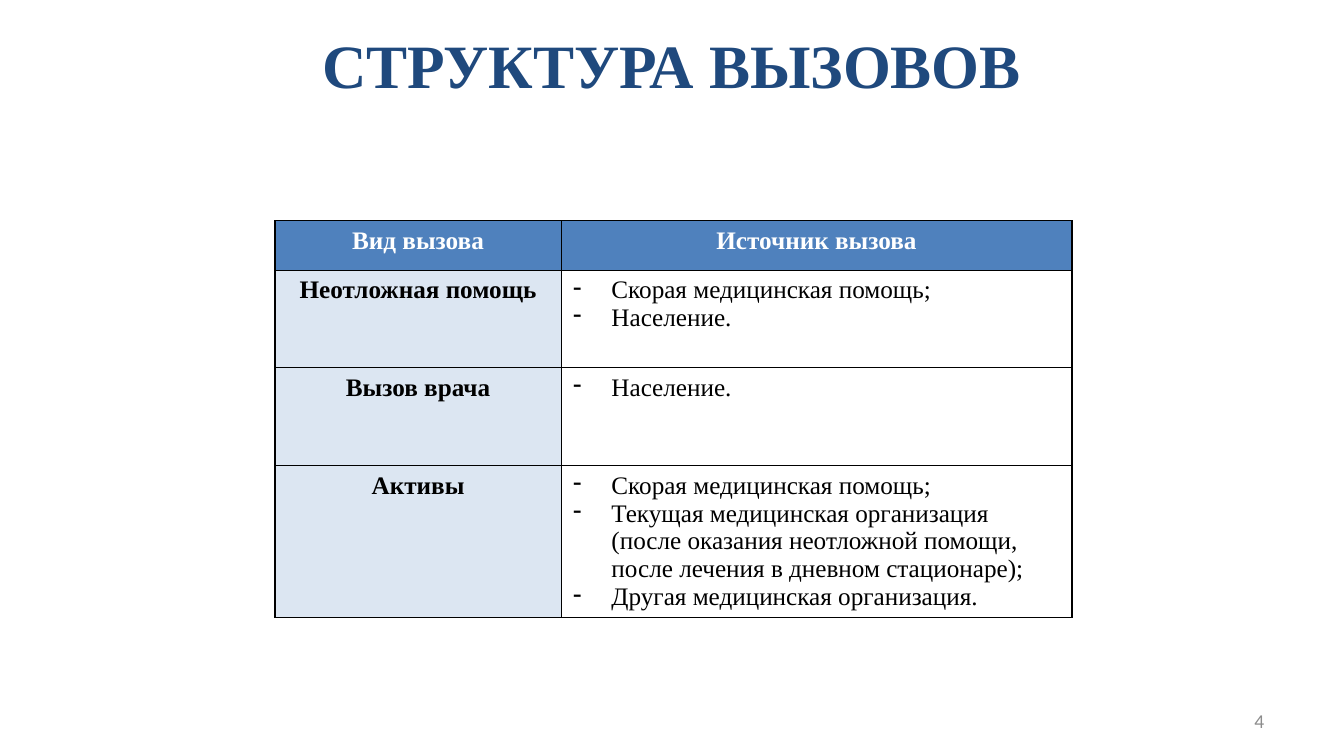
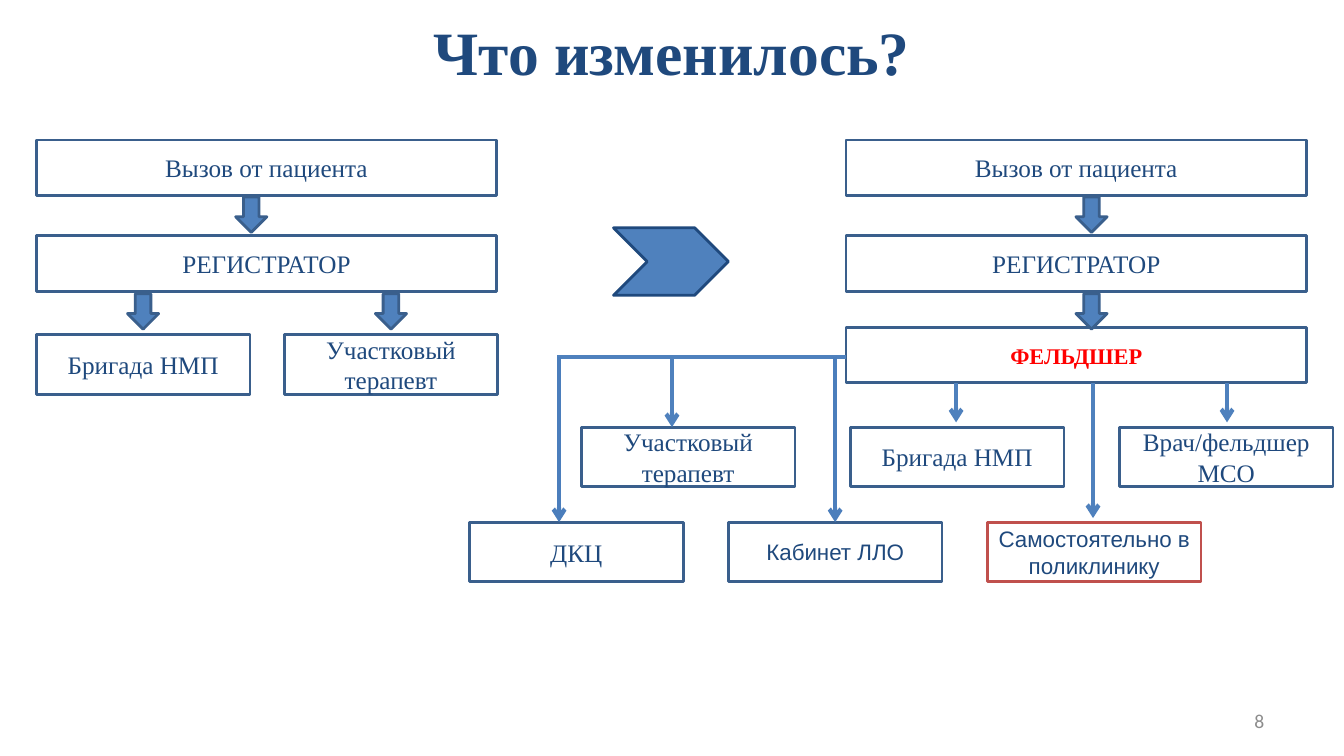
"""Builds two slides on how patient calls are structured and routed."""
from dataclasses import dataclass
from typing import Optional

from lxml.etree import SubElement
from pptx import Presentation
from pptx.dml.color import RGBColor
from pptx.enum.shapes import MSO_CONNECTOR, MSO_SHAPE
from pptx.enum.text import MSO_ANCHOR, MSO_AUTO_SIZE, PP_ALIGN
from pptx.oxml.ns import qn
from pptx.util import Inches, Pt

WIDTH, HEIGHT = 13.34, 7.5
NAVY = RGBColor(0x1F, 0x49, 0x7D)
BLUE = RGBColor(0x4F, 0x81, 0xBD)
STEEL = RGBColor(0x4B, 0x7E, 0xBC)
OUTLINE = RGBColor(0x3A, 0x5F, 0x8C)
PALE = RGBColor(0xDC, 0xE6, 0xF2)
GRAY = RGBColor(0x8C, 0x8C, 0x8C)
RED = RGBColor(0xFF, 0x00, 0x00)
BRICK = RGBColor(0xC0, 0x50, 0x4D)
WHITE = RGBColor(0xFF, 0xFF, 0xFF)
BLACK = RGBColor(0x00, 0x00, 0x00)
SERIF, SANS, NUMBER_FONT = "Times New Roman", "Arial", "Calibri"


@dataclass(frozen=True)
class Style:
    size: int = 18
    color: RGBColor = NAVY
    name: str = SERIF
    bold: bool = False
    align: Optional[PP_ALIGN] = PP_ALIGN.CENTER


@dataclass(frozen=True)
class Area:
    """Percentages of the slide's width and height."""
    left: float
    top: float
    width: float
    height: float


@dataclass(frozen=True)
class Step:
    text: str
    area: Area
    style: Style = Style()
    line: RGBColor = OUTLINE


@dataclass(frozen=True)
class Route:
    across: float
    start: float
    end: float
    color: RGBColor = BLUE


TITLE = Style(44, bold=True)
NUMBER = Style(14, GRAY, NUMBER_FONT, align=PP_ALIGN.RIGHT)
HEADER = Style(color=WHITE, bold=True)
CALL = Style(color=BLACK, bold=True)
SOURCE = Style(color=BLACK, align=None)
PARAMEDIC = Style(16, RED, bold=True)
SMALL = Style(16, name=SANS)

WIDE, NARROW = (34.26, 7.33), (15.9, 7.87)
LEFT, RIGHT = 2.7, 62.95
CALL_ROW, DESK_ROW, PARAMEDIC_ROW = 18.53, 31.2, 43.33
TEAM_ROW, UPPER_ROW, LOWER_ROW = 44.27, 56.5, 69.07
TEAM_STEP, UPPER_STEP, LOWER_STEP = 18.44, 20.02, 19.27
UPPER_LEFT, LOWER_LEFT = 43.25, 34.93
TEAM_CENTERS = [LEFT + index * TEAM_STEP + NARROW[0] / 2 for index in range(2)]

STEPS = [
    Step("Вызов от пациента", Area(LEFT, CALL_ROW, *WIDE)),
    Step("РЕГИСТРАТОР", Area(LEFT, DESK_ROW, *WIDE)),
    Step("Вызов от пациента", Area(RIGHT, CALL_ROW, *WIDE)),
    Step("РЕГИСТРАТОР", Area(RIGHT, DESK_ROW, *WIDE)),
    Step("ФЕЛЬДШЕР", Area(RIGHT, PARAMEDIC_ROW, *WIDE), PARAMEDIC),
    *[Step(text, Area(LEFT + index * TEAM_STEP, TEAM_ROW, *NARROW))
      for index, text in enumerate(["Бригада НМП", "Участковый терапевт"])],
    *[Step(text, Area(UPPER_LEFT + index * UPPER_STEP, UPPER_ROW, *NARROW))
      for index, text in enumerate(["Участковый терапевт", "Бригада НМП", "Врач/фельдшер МСО"])],
    *[Step(text, Area(LOWER_LEFT + index * LOWER_STEP, LOWER_ROW, *NARROW), style, line)
      for index, (text, style, line) in enumerate([
          ("ДКЦ", Style(), OUTLINE),
          ("Кабинет ЛЛО", SMALL, OUTLINE),
          ("Самостоятельно в поликлинику", SMALL, BRICK)])],
]

ARROW_SIZE = (2.32, 4.67)
FIRST_ARROWS, SECOND_ARROWS = 26.07, 38.87
ARROWS = [(18.7, FIRST_ARROWS), (81.22, FIRST_ARROWS), (81.22, SECOND_ARROWS),
          *[(center, SECOND_ARROWS) for center in TEAM_CENTERS]]
CHEVRON = Area(45.65, 30.13, 8.55, 8.93)

BRANCH, UNDER_PARAMEDIC = 47.2, 50.67
ROUTES = [
    Route(50, BRANCH, UPPER_ROW),
    Route(41.6, BRANCH, LOWER_ROW, STEEL),
    Route(71.14, UNDER_PARAMEDIC, 55.87),
    Route(91.3, UNDER_PARAMEDIC, 55.87),
    Route(62.14, BRANCH, LOWER_ROW, STEEL),
    Route(81.33, UNDER_PARAMEDIC, 68.53),
]

COLUMNS, ROWS = (21.29, 38.01), (6.53, 12.93, 12.93, 20.13)
TABLE = Area(20.46, 29.2, sum(COLUMNS), sum(ROWS))
CALLS = [
    ("Неотложная помощь", ["Скорая медицинская помощь;", "Население."]),
    ("Вызов врача", ["Население."]),
    ("Активы", [
        "Скорая медицинская помощь;",
        "Текущая медицинская организация (после оказания неотложной помощи, "
        "после лечения в дневном стационаре);",
        "Другая медицинская организация."]),
]


def across(percent: float) -> int:
    return Inches(WIDTH * percent / 100)


def down(percent: float) -> int:
    return Inches(HEIGHT * percent / 100)


def place(area: Area) -> tuple:
    return across(area.left), down(area.top), across(area.width), down(area.height)


def set_insets(holder) -> None:
    holder.margin_left = holder.margin_right = Inches(0.12)
    holder.margin_top = holder.margin_bottom = Inches(0.06)


def write(frame, lines: list, style: Style, dashed: bool = False) -> None:
    for index, text in enumerate(lines):
        para = frame.add_paragraph() if index else frame.paragraphs[0]
        para.text = text
        if dashed:
            properties = para._p.get_or_add_pPr()
            properties.set("marL", str(Inches(0.38)))
            properties.set("indent", str(-Inches(0.38)))
            SubElement(properties, qn("a:buChar"), char="-")
        if style.align is not None:
            para.alignment = style.align
        para.font.size = Pt(style.size)
        para.font.name = style.name
        para.font.bold = style.bold
        para.font.color.rgb = style.color


def add_page(deck, title: str, title_height: float, number: str):
    page = deck.slides.add_slide(deck.slide_layouts[5])
    heading = page.shapes.title
    heading.left, heading.top, heading.width, heading.height = place(Area(5, 0.13, 90, title_height))
    number_box = page.shapes.add_textbox(*place(Area(71.66, 92.67, 23.31, 5.33)))
    for box, text, style in ((heading, title, TITLE), (number_box, number, NUMBER)):
        frame = box.text_frame
        frame.word_wrap = True
        frame.auto_size = MSO_AUTO_SIZE.NONE
        frame.vertical_anchor = MSO_ANCHOR.MIDDLE
        set_insets(frame)
        write(frame, [text], style)
    return page


def fill_cell(cell, lines: list, style: Style, fill: RGBColor, dashed: bool = False) -> None:
    set_insets(cell)
    write(cell.text_frame, lines, style, dashed)
    properties = cell._tc.get_or_add_tcPr()
    for side in ("a:lnL", "a:lnR", "a:lnT", "a:lnB"):
        border = SubElement(properties, qn(side), w=str(Pt(1)))
        solid = SubElement(border, qn("a:solidFill"))
        SubElement(solid, qn("a:srgbClr"), val=str(BLACK))
    cell.fill.solid()
    cell.fill.fore_color.rgb = fill


def add_call_table(page) -> None:
    table = page.shapes.add_table(len(ROWS), len(COLUMNS), *place(TABLE)).table
    for column, width in zip(table.columns, COLUMNS):
        column.width = across(width)
    for row, height in zip(table.rows, ROWS):
        row.height = down(height)
    for index, text in enumerate(["Вид вызова", "Источник вызова"]):
        fill_cell(table.cell(0, index), [text], HEADER, BLUE)
    for index, (call, sources) in enumerate(CALLS, start=1):
        fill_cell(table.cell(index, 0), [call], CALL, PALE)
        fill_cell(table.cell(index, 1), sources, SOURCE, WHITE, dashed=True)


def add_figure(page, kind: MSO_SHAPE, area: Area, fill: RGBColor, line: RGBColor):
    figure = page.shapes.add_shape(kind, *place(area))
    figure.shadow.inherit = False
    figure.fill.solid()
    figure.fill.fore_color.rgb = fill
    figure.line.color.rgb = line
    figure.line.width = Pt(2)
    return figure


def add_step(page, step: Step) -> None:
    box = add_figure(page, MSO_SHAPE.RECTANGLE, step.area, WHITE, step.line)
    box.text_frame.word_wrap = True
    box.text_frame.vertical_anchor = MSO_ANCHOR.MIDDLE
    write(box.text_frame, [step.text], step.style)


def add_line(page, start: tuple, end: tuple, color: RGBColor, arrow: bool = False) -> None:
    connector = page.shapes.add_connector(
        MSO_CONNECTOR.STRAIGHT, across(start[0]), down(start[1]), across(end[0]), down(end[1]))
    connector.line.color.rgb = color
    connector.line.width = Pt(3)
    if arrow:
        SubElement(connector.line._get_or_add_ln(), qn("a:tailEnd"), type="arrow")
    SubElement(connector._element.spPr, qn("a:effectLst"))


def add_call_routes(page) -> None:
    add_figure(page, MSO_SHAPE.CHEVRON, CHEVRON, BLUE, NAVY)
    for step in STEPS:
        add_step(page, step)
    for center, top in ARROWS:
        area = Area(center - ARROW_SIZE[0] / 2, top, *ARROW_SIZE)
        add_figure(page, MSO_SHAPE.DOWN_ARROW, area, BLUE, OUTLINE)
    add_line(page, (RIGHT, BRANCH), (41.45, BRANCH), BLUE)
    for route in ROUTES:
        add_line(page, (route.across, route.start), (route.across, route.end), route.color, arrow=True)


def main() -> None:
    deck = Presentation()
    deck.slide_width, deck.slide_height = Inches(WIDTH), Inches(HEIGHT)
    add_call_table(add_page(deck, "СТРУКТУРА ВЫЗОВОВ", 16.67, "4"))
    add_call_routes(add_page(deck, "Что изменилось?", 13.07, "8"))
    deck.save("out.pptx")


if __name__ == "__main__":
    main()
